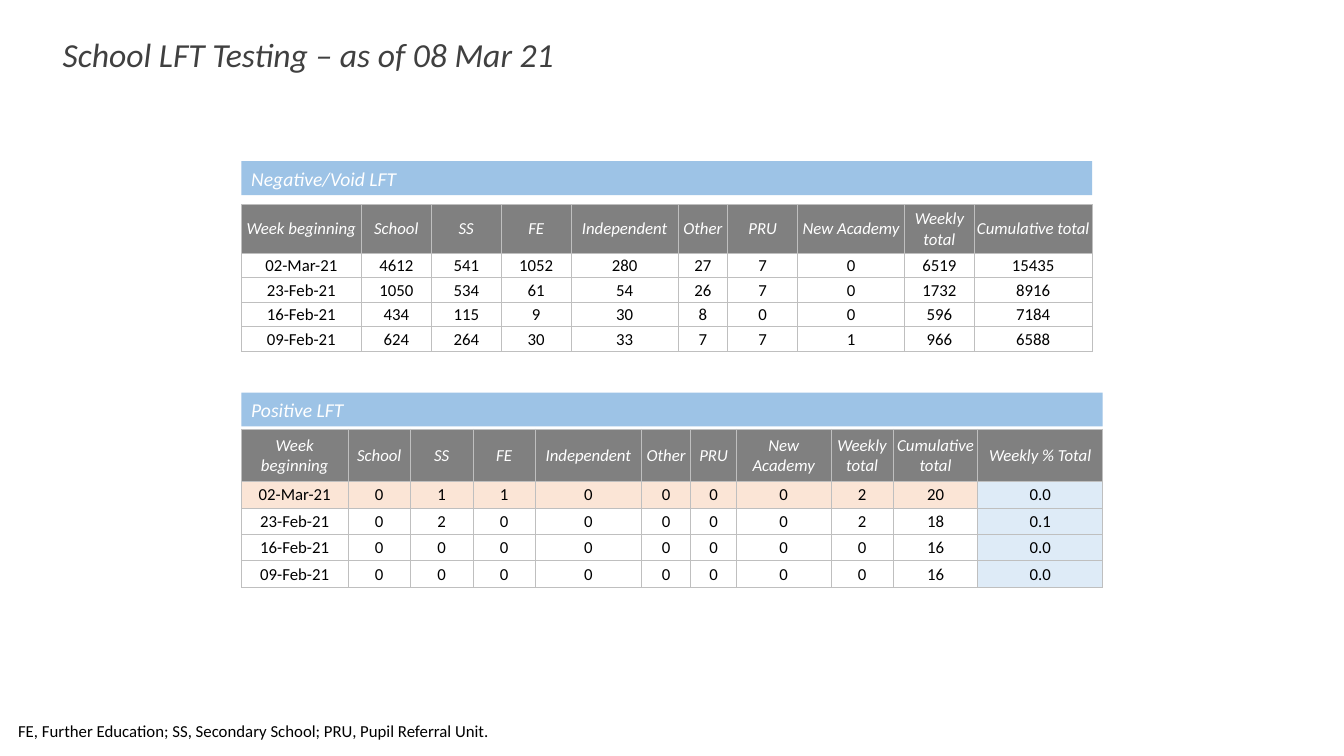
from pptx import Presentation
from pptx.dml.color import RGBColor
from pptx.enum.shapes import MSO_SHAPE
from pptx.enum.text import MSO_ANCHOR, MSO_AUTO_SIZE, PP_ALIGN
from pptx.oxml import parse_xml
from pptx.oxml.ns import nsdecls
from pptx.util import Pt

WHITE = RGBColor(0xFF, 0xFF, 0xFF)
BLACK = RGBColor(0, 0, 0)
DARK = RGBColor(0x40, 0x40, 0x40)
GREY = RGBColor(0x80, 0x80, 0x80)
RULE = RGBColor(0xBF, 0xBF, 0xBF)
BLUE = RGBColor(0x9D, 0xC3, 0xE6)
PALE_BLUE = RGBColor(0xDE, 0xEB, 0xF7)
PEACH = RGBColor(0xFB, 0xE5, 0xD6)

LEFT = 172.4
NEGATIVE_WIDTHS = [85.7, 50, 50, 50, 76.3, 35.5, 50, 76.3, 50, 84]
POSITIVE_WIDTHS = [76.2, 44.6, 44.6, 44.6, 75.9, 35.2, 32.6, 67.5, 44.6, 60.3, 89.2]
HEADINGS = ["Week beginning", "School", "SS", "FE", "Independent", "Other", "PRU",
            "New Academy", "Weekly total", "Cumulative total"]
NEGATIVE = [
    ["02-Mar-21", 4612, 541, 1052, 280, 27, 7, 0, 6519, 15435],
    ["23-Feb-21", 1050, 534, 61, 54, 26, 7, 0, 1732, 8916],
    ["16-Feb-21", 434, 115, 9, 30, 8, 0, 0, 596, 7184],
    ["09-Feb-21", 624, 264, 30, 33, 7, 7, 1, 966, 6588],
]
POSITIVE = [
    ["02-Mar-21", 0, 1, 1, 0, 0, 0, 0, 2, 20, "0.0"],
    ["23-Feb-21", 0, 2, 0, 0, 0, 0, 0, 2, 18, "0.1"],
    ["16-Feb-21", 0, 0, 0, 0, 0, 0, 0, 0, 16, "0.0"],
    ["09-Feb-21", 0, 0, 0, 0, 0, 0, 0, 0, 16, "0.0"],
]


def set_text(tf, text, size=12, color=BLACK, italic=False, align=PP_ALIGN.LEFT):
    """Write one formatted run into a text frame."""
    p = tf.paragraphs[0]
    p.alignment = align
    r = p.add_run()
    r.text = text
    r.font.name = "Calibri"
    r.font.size = Pt(size)
    r.font.italic = italic
    r.font.color.rgb = color


def fit_line(sp, left, top, width, height):
    """Place a one-line text shape that grows with its text."""
    sp.left, sp.top, sp.width, sp.height = Pt(left), Pt(top), Pt(width), Pt(height)
    tf = sp.text_frame
    tf.word_wrap = False
    tf.auto_size = MSO_AUTO_SIZE.SHAPE_TO_FIT_TEXT
    tf.vertical_anchor = MSO_ANCHOR.TOP
    return tf


def add_banner(slide, text, top, width):
    """Add the blue heading bar above a table."""
    sp = slide.shapes.add_shape(MSO_SHAPE.RECTANGLE, Pt(LEFT), Pt(top), Pt(width), Pt(24.2))
    sp.shadow.inherit = False
    sp.fill.solid()
    sp.fill.fore_color.rgb = BLUE
    sp.line.fill.background()
    set_text(sp.text_frame, text, size=14, color=WHITE, italic=True)


def format_cell(cell, fill, ruled):
    """Give a cell tight margins, an optional fill and thin or bottom-only borders."""
    tc_pr = cell._tc.get_or_add_tcPr()
    line = f'<a:solidFill><a:srgbClr val="{RULE}"/></a:solidFill>'
    for side in ("lnL", "lnR", "lnT", "lnB"):
        paint = line if ruled or side == "lnB" else "<a:noFill/>"
        tc_pr.append(parse_xml(
            f'<a:{side} {nsdecls("a")} w="{Pt(0.5)}">{paint}</a:{side}>'))
    cell.margin_left = cell.margin_right = cell.margin_top = Pt(0.7)
    cell.margin_bottom = 0
    cell.vertical_anchor = MSO_ANCHOR.MIDDLE
    if fill is None:
        cell.fill.background()
    else:
        cell.fill.solid()
        cell.fill.fore_color.rgb = fill


def add_results(slide, rows, widths, top, heights, fill_for, header_row=0):
    """Add a table with a grey header row."""
    table = slide.shapes.add_table(len(rows), len(widths), Pt(LEFT), Pt(top),
                                   Pt(sum(widths)), Pt(sum(heights))).table
    table.first_row = table.horz_banding = False
    for col, width in zip(table.columns, widths):
        col.width = Pt(width)
    for i, values in enumerate(rows):
        header = i == header_row
        table.rows[i].height = Pt(heights[i])
        for j, value in enumerate(values):
            cell = table.cell(i, j)
            format_cell(cell, GREY if header else fill_for(i, j), i >= header_row)
            set_text(cell.text_frame, str(value), color=WHITE if header else BLACK,
                     italic=header, align=PP_ALIGN.CENTER)


def positive_fill(row, col):
    """Tint the percentage column and the latest week."""
    if col == len(HEADINGS):
        return PALE_BLUE
    return PEACH if row == 1 else None


def main():
    """Build and save the slide."""
    prs = Presentation()
    prs.slide_width, prs.slide_height = Pt(960), Pt(540)
    slide = prs.slides.add_slide(prs.slide_layouts[5])

    tf = fit_line(slide.shapes.title, 37.6, 20.9, 369.4, 36)
    set_text(tf, "School LFT Testing – as of 08 Mar 21", size=24, color=DARK, italic=True)

    add_results(slide, [[""] * len(HEADINGS), HEADINGS] + NEGATIVE, NEGATIVE_WIDTHS,
                123.8, [17.6, 34.6] + [17.6] * len(NEGATIVE),
                lambda row, col: None, header_row=1)
    add_results(slide, [HEADINGS + ["Weekly % Total"]] + POSITIVE, POSITIVE_WIDTHS,
                306.5, [37.4] + [18.9] * len(POSITIVE), positive_fill)

    note = slide.shapes.add_textbox(0, 0, 0, 0)
    set_text(fit_line(note, 5.8, 511.5, 354.2, 21.6),
             "FE, Further Education; SS, Secondary School; PRU, Pupil Referral Unit.")

    add_banner(slide, "Negative/Void LFT", 115.2, sum(NEGATIVE_WIDTHS))
    add_banner(slide, "Positive LFT", 280.5, sum(POSITIVE_WIDTHS))
    prs.save("out.pptx")


if __name__ == "__main__":
    main()
